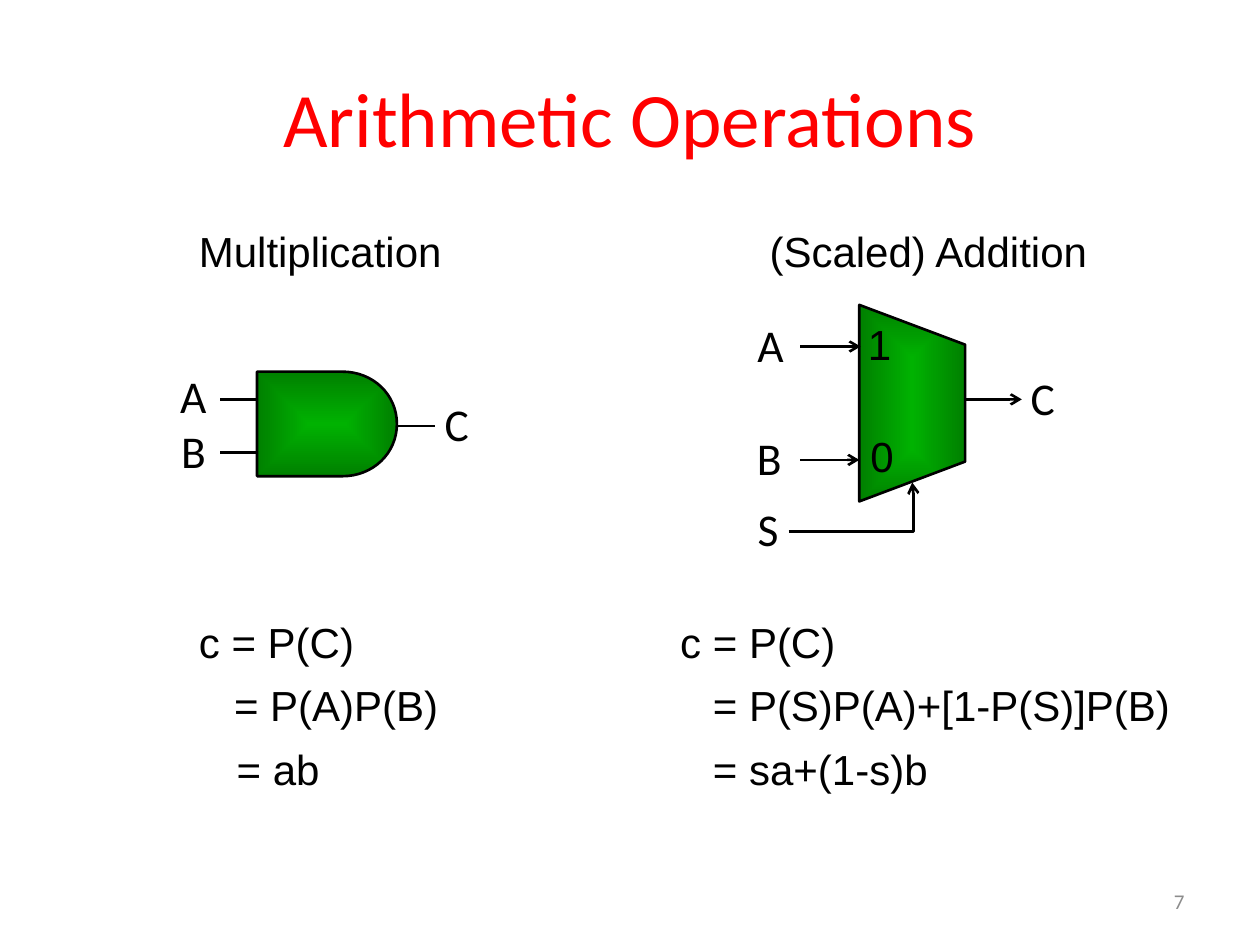
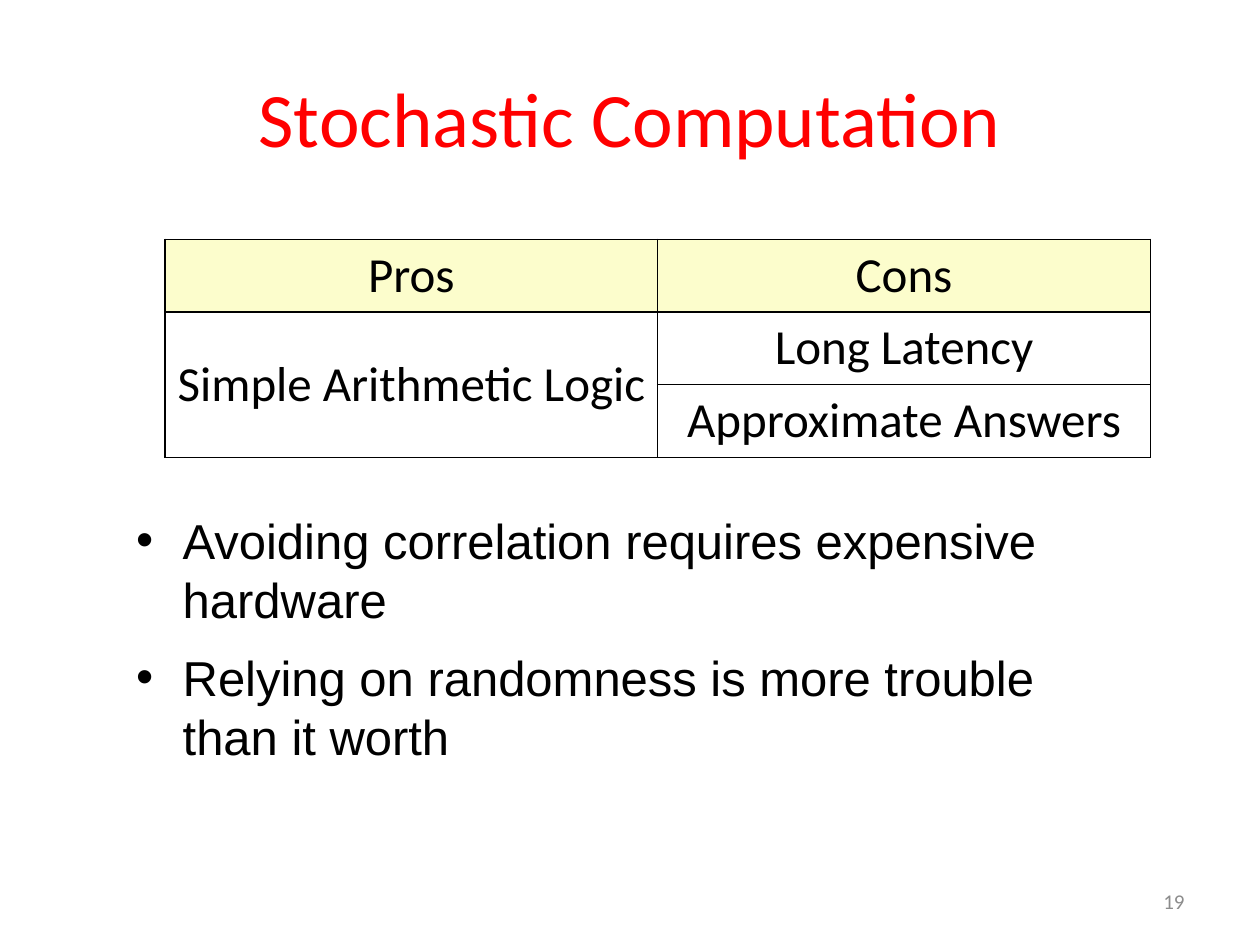
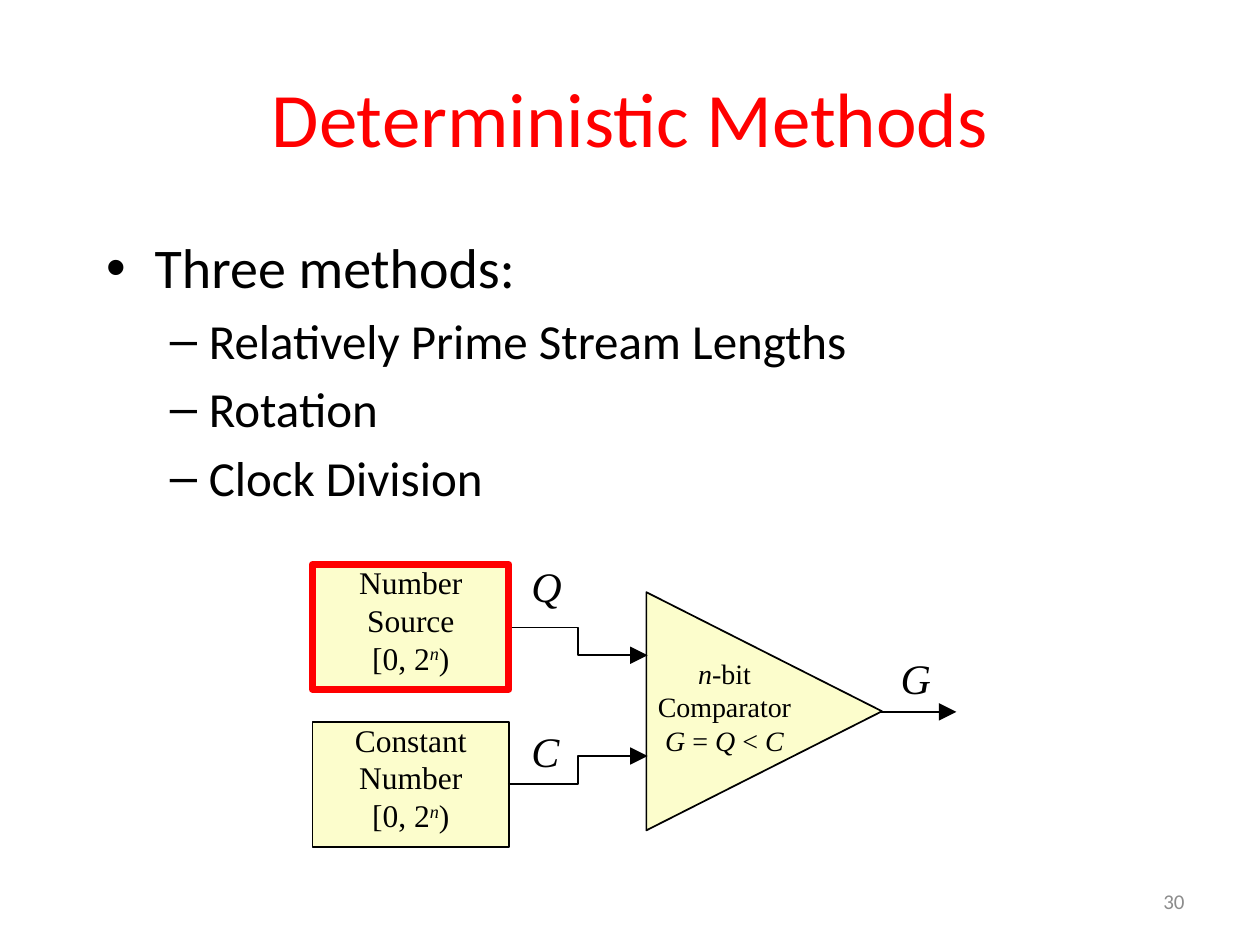
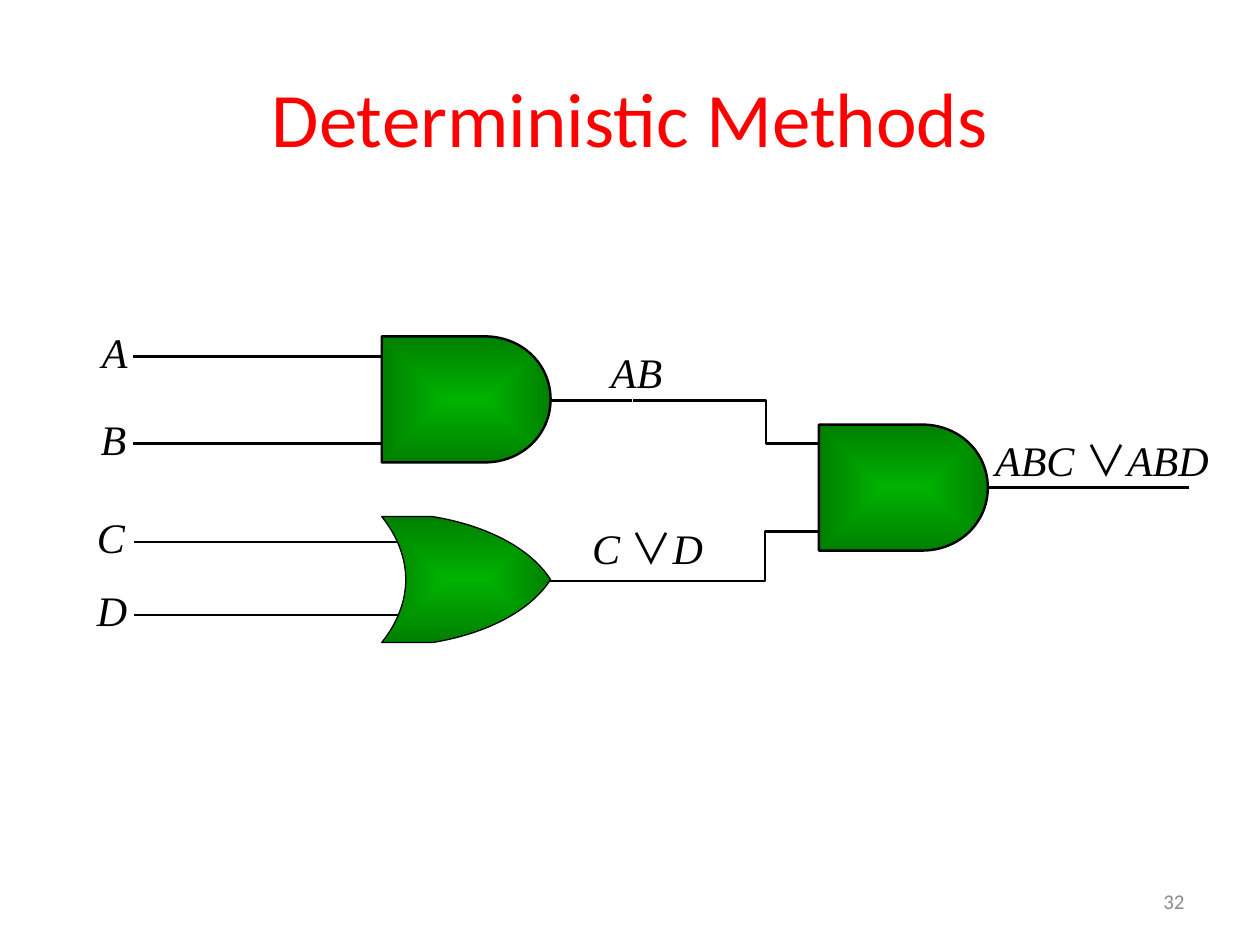
"""Build four slides on stochastic and deterministic logic circuits."""
import pptx
import pptx.util
import pptx.dml.color
import pptx.enum.shapes
import pptx.enum.text
import pptx.oxml.ns
from lxml import etree

PX = 9144
COLORS = {"title": "FF0000", "ink": "000000", "number": "8C8C8C", "cream": "FCFDCC",
          "gate_in": "00B201", "gate_out": "008000"}
ALIGN = pptx.enum.text.PP_ALIGN
ANCHOR = pptx.enum.text.MSO_ANCHOR
SHAPE = pptx.enum.shapes.MSO_SHAPE
LINK = pptx.enum.shapes.MSO_CONNECTOR
SERIF = "Times New Roman"
ITALIC = {"italic": True}
OR_SIGN = ("∨", {"font": "Noto Sans CJK JP"})
AND_GATE = [[(0.61, 1)], [(0, 1)], [(0, 0)], [(0.61, 0)],
            [(0.83, 0), (1, 0.22), (1, 0.5)], [(1, 0.78), (0.83, 1), (0.61, 1)]]
OR_GATE = [[(1, 0.5)], [(0.88, 0.75), (0.62, 0.93), (0.3, 1)], [(0, 1)],
           [(0.19, 0.68), (0.19, 0.32), (0, 0)], [(0.3, 0)],
           [(0.62, 0.07), (0.88, 0.25), (1, 0.5)]]
Pt = pptx.util.Pt
qn = pptx.oxml.ns.qn


def emu(*lengths):
    """Turn px lengths into EMU."""
    return [round(v * PX) for v in lengths]


def rgb(name):
    """Look up a colour by name."""
    return pptx.dml.color.RGBColor.from_string(COLORS[name])


def sub(parent, tag, **attrs):
    """Append an XML child with attributes."""
    return etree.SubElement(parent, qn(tag), attrs)


def format_run(r, size, font, color="ink", italic=False, raised=False):
    """Set the font of one run."""
    r.font.size, r.font.name = Pt(size), font
    r.font.bold, r.font.italic = False, italic
    r.font.color.rgb = rgb(color)
    rPr = r.font._element
    sub(rPr, "a:ea", typeface=font)
    if raised:
        rPr.set("baseline", "30000")


def fill_paragraph(p, content, size, font, color="ink", align=ALIGN.LEFT):
    """Write a string or a list of (text, style) pieces into a paragraph."""
    p.alignment = align
    if isinstance(content, str):
        content = [(content, {})]
    for words, style in content:
        r = p.add_run()
        r.text = words
        format_run(r, **{"size": size, "font": font, "color": color, **style})


def add_text(s, box, paragraphs, size=24, font="Arial", color="ink", align=ALIGN.LEFT,
             inset=(10, 5), wrap=True, anchor=ANCHOR.TOP):
    """Add a text box and return its text frame."""
    tf = s.shapes.add_textbox(*emu(*box)).text_frame
    tf.word_wrap, tf.vertical_anchor = wrap, anchor
    tf.margin_left = tf.margin_right = inset[0] * PX
    tf.margin_top = tf.margin_bottom = inset[1] * PX
    for i, content in enumerate(paragraphs):
        p = tf.add_paragraph() if i else tf.paragraphs[0]
        fill_paragraph(p, content, size, font, color, align)
    return tf


def add_label(s, x, y, letter):
    """Add a centred sans-serif pin label."""
    add_text(s, (x, y, 45, 44), [letter], 26, "Calibri", align=ALIGN.CENTER, inset=(0, 0))


def add_signal(s, x, y, w, *pieces):
    """Add an italic serif signal name."""
    content = [(piece, ITALIC) if isinstance(piece, str) else piece for piece in pieces]
    add_text(s, (x, y, w, 50), [content], font=SERIF)


def add_equations(s, rows):
    """Add unwrapped formula lines given as (x, y, w, text)."""
    for x, y, w, words in rows:
        add_text(s, (x, y, w, 50), [words], wrap=False)


def set_bullet(p, char, left, hang):
    """Give a paragraph a hanging bullet."""
    pPr = p._p.get_or_add_pPr()
    pPr.set("marL", str(left * PX))
    pPr.set("indent", str(-hang * PX))
    sub(pPr, "a:buFont", typeface="Arial")
    sub(pPr, "a:buChar", char=char)


def add_slide(prs, title, number):
    """Add a titled and numbered slide."""
    s = prs.slides.add_slide(prs.slide_layouts[5])
    ph = s.shapes.title
    ph.left, ph.top, ph.width, ph.height = emu(50, 30, 900, 125)
    tf = ph.text_frame
    tf.text = title
    tf.vertical_anchor = ANCHOR.MIDDLE
    tf.paragraphs[0].alignment = ALIGN.CENTER
    format_run(tf.paragraphs[0].runs[0], 44, "Calibri", "title")
    add_text(s, (717, 695, 233, 40), [str(number)], 12, "Calibri", "number",
             ALIGN.RIGHT, anchor=ANCHOR.MIDDLE)
    return s


def add_wire(s, x1, y1, x2, y2, width=1.38, head=None, bend=None, size="med"):
    """Add a straight wire, or an elbow that turns at the fraction bend."""
    kind = LINK.STRAIGHT if bend is None else LINK.ELBOW
    c = s.shapes.add_connector(kind, *emu(x1, y1, x2, y2))
    c.line.width, c.line.color.rgb = Pt(width), rgb("ink")
    spPr = c._element.spPr
    if head:
        sub(spPr.find(qn("a:ln")), "a:tailEnd", type=head, w=size, len=size)
    sub(spPr, "a:effectLst")
    if bend is not None:
        guides = spPr.find(qn("a:prstGeom")).get_or_add_avLst()
        sub(guides, "a:gd", name="adj1", fmla=f"val {round(bend * 100000)}")


def style_shape(shape, width, line="ink", fill=None):
    """Set outline and flat fill of a shape."""
    shape.shadow.inherit = False
    shape.line.width, shape.line.color.rgb = Pt(width), rgb(line)
    if fill:
        shape.fill.solid()
        shape.fill.fore_color.rgb = rgb(fill)
    else:
        shape.fill.background()


def fill_gate(shape):
    """Fill a gate with a green gradient from its centre."""
    shape.fill.gradient()
    for stop, name in zip(shape.fill.gradient_stops, ("gate_in", "gate_out")):
        stop.color.rgb = rgb(name)
    grad = shape._element.spPr.find(qn("a:gradFill"))
    grad.remove(grad.find(qn("a:lin")))
    sub(sub(grad, "a:path", path="rect"), "a:fillToRect",
        l="50000", t="50000", r="50000", b="50000")


def bend_segments(shape, segments):
    """Turn each run of three points in a freeform into one cubic curve."""
    nodes = iter(list(shape._element.iter(qn("a:lnTo"))))
    for segment in segments:
        group = [next(nodes) for _ in segment]
        if len(group) == 3:
            cubic = etree.Element(qn("a:cubicBezTo"))
            group[0].addprevious(cubic)
            for node in group:
                cubic.append(node[0])
                node.getparent().remove(node)


def add_gate(s, x, y, w, h, outline, width=1.38):
    """Draw a gate from line and curve segments in unit coordinates."""
    start, *points = [emu(x + u * w, y + v * h) for segment in outline for u, v in segment]
    builder = s.shapes.build_freeform(*start, scale=1.0)
    builder.add_line_segments(points, close=True)
    gate = builder.convert_to_shape()
    bend_segments(gate, outline[1:])
    style_shape(gate, width)
    fill_gate(gate)


def add_leads(s, left, middle, right, inputs, output):
    """Draw the input and output leads of a gate as one outline."""
    builder = s.shapes.build_freeform(*emu(left, inputs[0]), scale=1.0)
    builder.add_line_segments([emu(middle, inputs[0])], close=False)
    for x, y in ((left, inputs[1]), (right, output)):
        builder.move_to(*emu(x, y))
        builder.add_line_segments([emu(middle, y)], close=False)
    style_shape(builder.convert_to_shape(), 1.38)


def add_multiplexer(s):
    """Draw the multiplexer with its wires and pins."""
    mux = s.shapes.add_shape(SHAPE.TRAPEZOID, *emu(646, 278, 156, 84))
    mux.rotation = 90
    mux.adjustments[0] = 0.376
    style_shape(mux, 1.5)
    fill_gate(mux)
    add_wire(s, 626, 422, 724, 383, 1.5, "arrow", bend=1.01)
    for x1, x2, y in ((635, 682, 365), (635, 683, 275), (766, 811, 317)):
        add_wire(s, x1, y, x2, y, 1.5, "arrow")
    for x, y, digit in ((679, 248, "1"), (681, 337, "0")):
        add_text(s, (x, y, 70, 50), [digit])
    for x, y, letter in ((589, 252, "A"), (588, 341, "B"), (587, 398, "S"), (805, 294, "C")):
        add_label(s, x, y, letter)


def build_arithmetic(prs):
    """Build the slide on multiplication and scaled addition."""
    s = add_slide(prs, "Arithmetic Operations", 7)
    add_leads(s, 175, 260, 345, (317, 359), 338)
    add_gate(s, 204, 295, 111, 83, AND_GATE, 1.5)
    for x, y, letter in ((340, 314, "C"), (131, 336, "B"), (131, 292, "A")):
        add_label(s, x, y, letter)
    add_multiplexer(s)
    add_equations(s, [
        (148, 174, 213, "Multiplication"), (148, 484, 145, "c = P(C)"),
        (176, 534, 184, "= P(A)P(B)"), (178, 585, 87, "= ab"),
        (601, 174, 274, "(Scaled) Addition"), (530, 484, 145, "c = P(C)"),
        (556, 534, 387, "= P(S)P(A)+[1-P(S)]P(B)"), (556, 585, 192, "= sa+(1-s)b")])


def style_cell(cell, fill=None):
    """Set borders and fill of a table cell."""
    tcPr = cell._tc.get_or_add_tcPr()
    for side in ("L", "R", "T", "B"):
        ln = sub(tcPr, f"a:ln{side}", w=str(Pt(1)))
        sub(sub(ln, "a:solidFill"), "a:srgbClr", val=COLORS["ink"])
    if fill:
        cell.fill.solid()
        cell.fill.fore_color.rgb = rgb(fill)
    else:
        cell.fill.background()


def add_pros_table(s, rows):
    """Add the pros and cons table, merging cells below the left entry."""
    table = s.shapes.add_table(len(rows), 2, *emu(131, 190, 782, 173)).table
    table.first_row = table.horz_banding = False
    for i, row in enumerate(rows):
        for j, words in enumerate(row):
            cell = table.cell(i, j)
            style_cell(cell, None if i else "cream")
            if words:
                fill_paragraph(cell.text_frame.paragraphs[0], words, 28, "Calibri",
                               align=ALIGN.CENTER)
    table.cell(1, 0).merge(table.cell(2, 0))
    table.cell(1, 0).vertical_anchor = ANCHOR.MIDDLE


def build_computation(prs):
    """Build the slide on pros and cons."""
    s = add_slide(prs, "Stochastic Computation", 19)
    add_pros_table(s, [("Pros", "Cons"), ("Simple Arithmetic Logic", "Long Latency"),
                       (None, "Approximate Answers")])
    points = ("Avoiding correlation requires expensive hardware",
              "Relying on randomness is more trouble than it worth")
    for i, words in enumerate(points):
        tf = add_text(s, (88, 401 + 109 * i, 825, 149), [words], 28, inset=(7, 4))
        tf.paragraphs[0].space_after = Pt(6)
        set_bullet(tf.paragraphs[0], "•", 50, 37)


def add_outline(s, box, heading, items):
    """Add a bulleted heading with dashed items below it."""
    tf = add_text(s, box, [heading] + items, 28, "Calibri")
    first, *rest = tf.paragraphs
    first.runs[0].font.size = Pt(32)
    first.space_before = Pt(6.4)
    set_bullet(first, "•", 38, 38)
    for p in rest:
        p.space_before = Pt(5.6)
        p.level = 1
        set_bullet(p, "–", 81, 31)


def add_source(s, y, name):
    """Add a number source box with its range."""
    box = s.shapes.add_shape(SHAPE.RECTANGLE, *emu(248, y, 156, 99))
    style_shape(box, 1, fill="cream")
    span = [("[0, 2", {}), ("n", {"italic": True, "raised": True}), (")", {})]
    add_text(s, (257, y - 6, 138, 101), [name, span], 18, SERIF, align=ALIGN.CENTER)


def build_methods(prs):
    """Build the slide that lists the methods above a comparator."""
    s = add_slide(prs, "Deterministic Methods", 30)
    add_outline(s, (75, 180, 900, 257), "Three methods:",
                ["Relatively Prime Stream Lengths", "Rotation", "Clock Division"])
    add_source(s, 448, "Number Source")
    add_source(s, 573, "Constant Number")
    add_wire(s, 665, 565, 759, 565, 1, "triangle", size="lg")
    comparator = s.shapes.add_shape(SHAPE.ISOSCELES_TRIANGLE, *emu(512, 471, 189, 187))
    comparator.rotation = 90
    style_shape(comparator, 1, fill="cream")
    rule = [("G", ITALIC), (" = ", {}), ("Q", ITALIC), (" < ", {}), ("C", ITALIC)]
    add_text(s, (512, 516, 126, 91), [[("n", ITALIC), ("-bit", {})], "Comparator", rule],
             16, SERIF, align=ALIGN.CENTER)
    for y1, y2 in ((498, 520), (622, 600)):
        add_wire(s, 403, y1, 514, y2, 1, "triangle", bend=0.5, size="lg")
    for x, y, w, name in ((705, 513, 51, "G"), (412, 571, 66, "C"), (412, 440, 66, "Q")):
        add_signal(s, x, y, w, name)
    frame = s.shapes.add_shape(SHAPE.RECTANGLE, *emu(248, 448, 156, 99))
    style_shape(frame, 4, "title")


def build_circuit(prs):
    """Build the slide with the three-gate circuit."""
    s = add_slide(prs, "Deterministic Methods", 32)
    for x1, x2, y in ((366, 106, 430), (366, 106, 488), (944, 750, 387)):
        add_wire(s, x1, y, x2, y)
    add_wire(s, 384, 461, 670, 422, bend=0.78)
    add_leads(s, 106, 304, 502, (283, 352), 318)
    add_wire(s, 502, 318, 670, 352, bend=0.63)
    for x, y, outline, width in ((303, 267, AND_GATE, 1.38), (650, 337, AND_GATE, 1.38),
                                 (303, 410, OR_GATE, 0)):
        add_gate(s, x, y, 134, 100, outline, width)
    for x, y, name in ((71, 254, "A"), (70, 323, "B"), (67, 401, "C"), (67, 459, "D"),
                       (475, 270, "AB")):
        add_signal(s, x, y, 75, name)
    add_signal(s, 460, 410, 138, "C ", OR_SIGN, "D")
    add_signal(s, 780, 340, 228, "ABC ", OR_SIGN, "ABD")


def main():
    """Build and save the presentation."""
    prs = pptx.Presentation()
    prs.slide_width, prs.slide_height = emu(1000, 750)
    build_arithmetic(prs)
    build_computation(prs)
    build_methods(prs)
    build_circuit(prs)
    prs.save("out.pptx")


if __name__ == "__main__":
    main()
